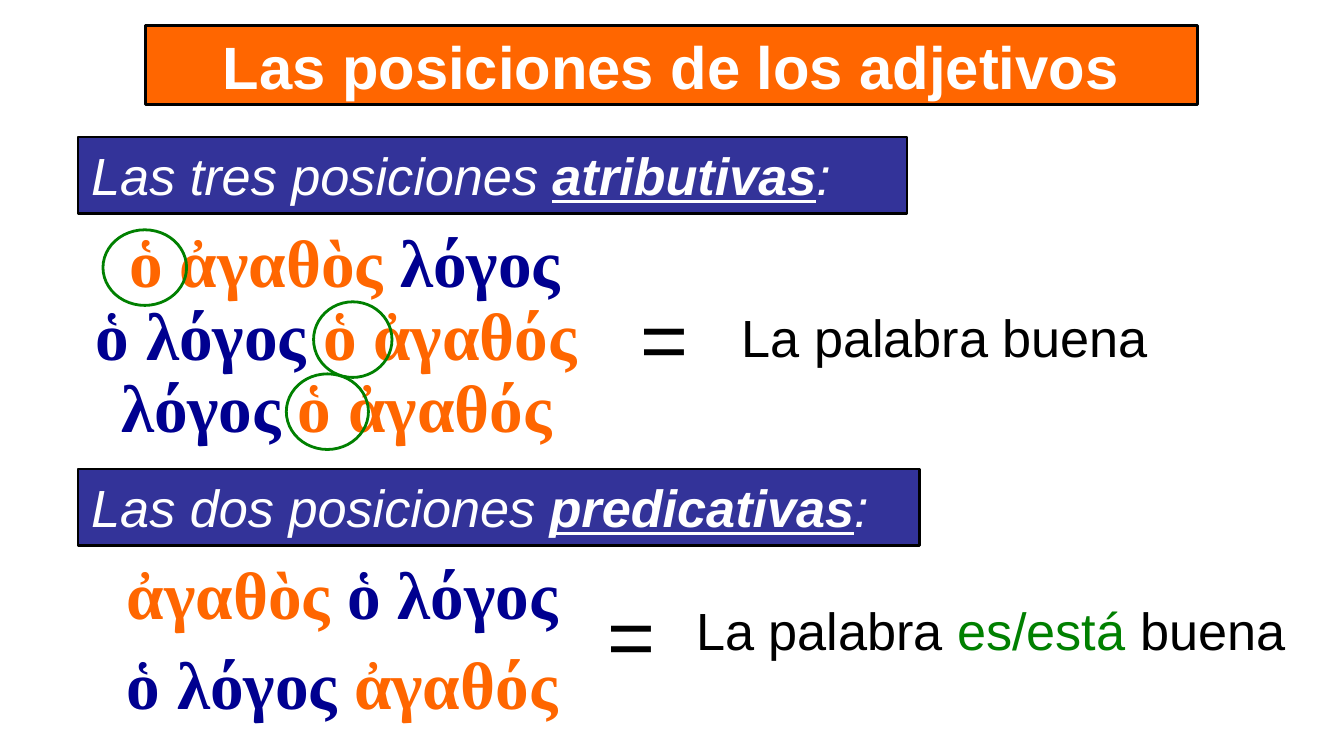
from pptx import Presentation
from pptx.dml.color import RGBColor
from pptx.enum.shapes import MSO_SHAPE
from pptx.enum.text import MSO_ANCHOR, PP_ALIGN
from pptx.util import Pt

RECTANGLE, OVAL = MSO_SHAPE.RECTANGLE, MSO_SHAPE.OVAL
TOP, MIDDLE = MSO_ANCHOR.TOP, MSO_ANCHOR.MIDDLE
LEFT, CENTER = PP_ALIGN.LEFT, PP_ALIGN.CENTER
COLORS = {
    "orange": "FF6600",
    "blue": "333399",
    "navy": "000090",
    "green": "008000",
    "black": "000000",
    "white": "FFFFFF",
}

presentation = Presentation()
presentation.slide_width = Pt(720)
presentation.slide_height = Pt(405)
slide = presentation.slides.add_slide(presentation.slide_layouts[6])


def add_outlined(kind, box, line, fill=None):
    shape = slide.shapes.add_shape(kind, *map(Pt, box))
    shape.shadow.inherit = False
    shape.line.color.rgb = RGBColor.from_string(COLORS[line])
    shape.line.width = Pt(1.5)
    if fill:
        shape.fill.solid()
        shape.fill.fore_color.rgb = RGBColor.from_string(COLORS[fill])
    else:
        shape.fill.background()
    return shape


def write(shape, runs, size, font="Arial", align=LEFT, anchor=TOP, before=0):
    frame = shape.text_frame
    frame.word_wrap = True
    frame.vertical_anchor = anchor
    paragraph = frame.paragraphs[0]
    paragraph.alignment = align
    paragraph.space_before = Pt(before)
    paragraph.font.size = Pt(size)
    paragraph.font.name = font
    for text, color in runs:
        run = paragraph.add_run()
        run.text = text
        run.font.color.rgb = RGBColor.from_string(COLORS[color])
    return paragraph


title = add_outlined(RECTANGLE, (77.8, 13.7, 563.8, 42.5), "black", "orange")
paragraph = write(title, [("Las posiciones de los adjetivos", "white")], 32,
                  align=CENTER, anchor=MIDDLE)
paragraph.font.bold = True

headings = [
    (73.4, 444.2, "Las tres posiciones ", "atributivas"),
    (251.3, 450.7, "Las dos posiciones ", "predicativas"),
]
for top, width, lead, keyword in headings:
    heading = add_outlined(RECTANGLE, (41.8, top, width, 41), "black", "blue")
    paragraph = write(heading, [(lead, "white"), (keyword, "white"), (":", "white")],
                      28, before=3)
    paragraph.font.italic = True
    paragraph.runs[1].font.bold = True
    paragraph.runs[1].font.underline = True

translations = [
    (390.2, 159.8, 318.2, 41, 28, [("La palabra buena", "black")]),
    (336.2, 150.5, 66.2, 60.5, 44, [("=", "black")]),
    (318.2, 309.6, 54, 60.5, 44, [("=", "black")]),
    (365.8, 316.8, 354.2, 41, 28,
     [("La palabra ", "black"), ("es/está", "green"), (" buena", "black")]),
]
for left, top, width, height, size, runs in translations:
    box = slide.shapes.add_textbox(Pt(left), Pt(top), Pt(width), Pt(height))
    write(box, runs, size, before=3)

phrases = [
    (28.8, 114.5, [("ὁ ἀγαθὸς ", "orange"), ("λόγος", "navy")]),
    (28.8, 153.4, [("ὁ λόγος ", "navy"), ("ὁ ἀγαθός ", "orange")]),
    (28.8, 192.2, [("λόγος ", "navy"), ("ὁ ἀγαθός ", "orange")]),
    (27.4, 292.3, [("ἀγαθὸς ", "orange"), ("ὁ λόγος", "navy")]),
    (27.4, 340.6, [("ὁ λόγος", "navy"), (" ἀγαθός", "orange")]),
]
for left, top, runs in phrases:
    box = slide.shapes.add_textbox(Pt(left), Pt(top), Pt(311.8), Pt(51.1))
    paragraph = write(box, runs, 36, "Times New Roman", CENTER)
    paragraph.font.bold = True

article_rings = [(55.2, 44.8), (168, 42), (153.4, 44)]
for row, (left, width) in enumerate(article_rings):
    add_outlined(OVAL, (left, 123.1 + 38.6 * row, width, 40.5), "green")

presentation.save("out.pptx")
